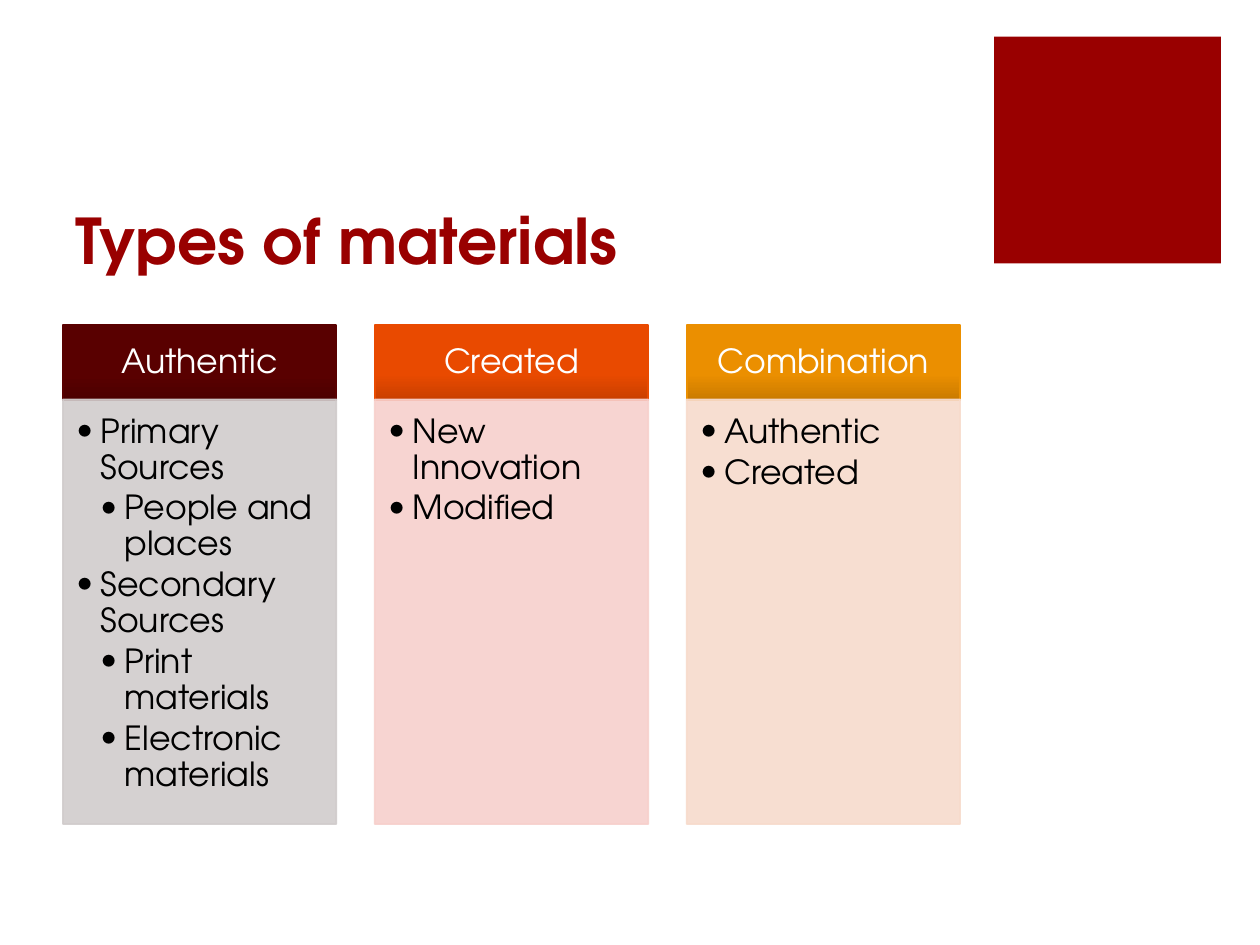
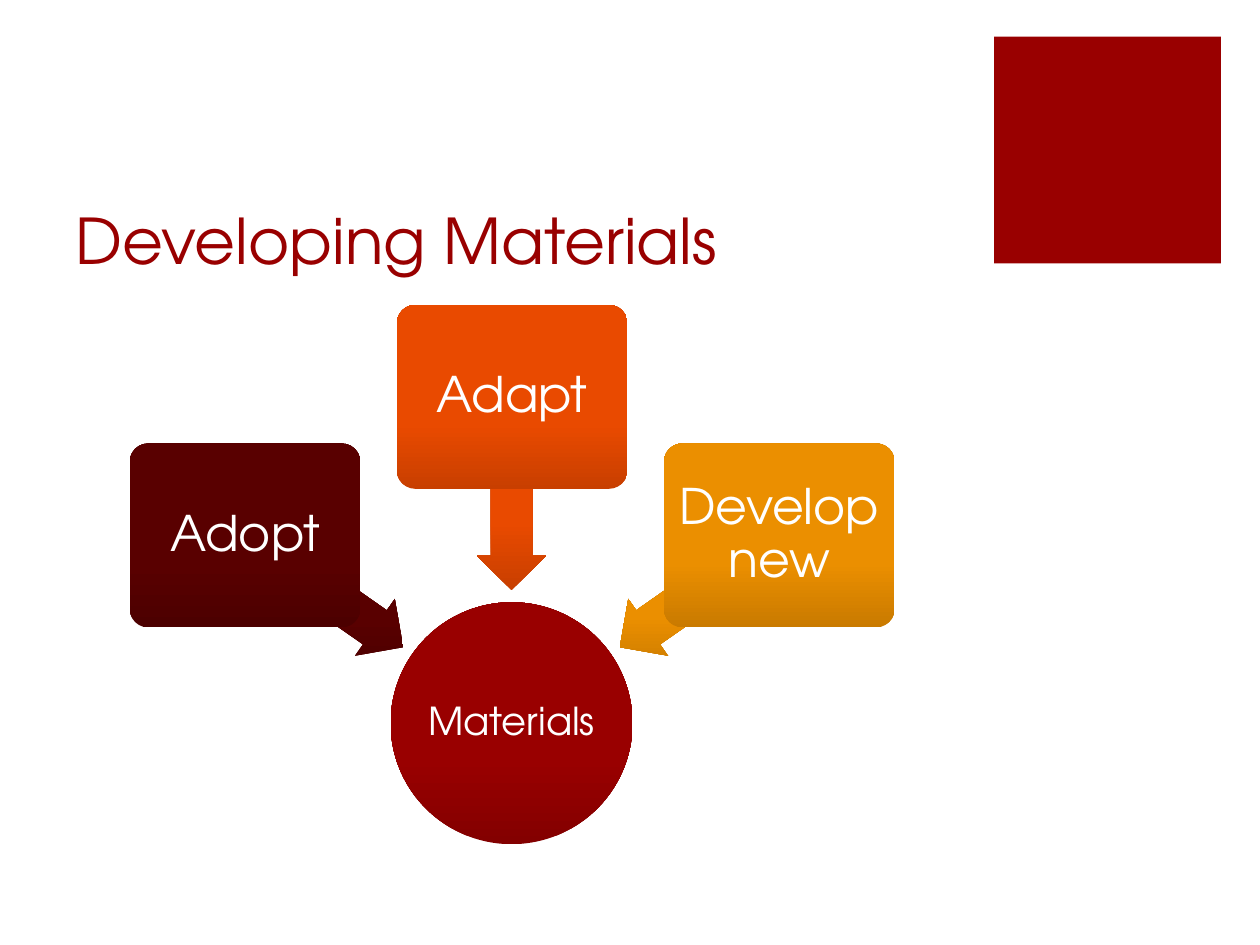
from lxml import etree
from pptx import Presentation, util as u
from pptx.dml.color import RGBColor
from pptx.enum import shapes, text
from pptx.oxml import ns

FONT = "TeX Gyre Adventor"
RED, WHITE, BLACK = "990000", "FFFFFF", "000000"
MAROON, ORANGE, AMBER = ("4C0000", "590000"), ("C83F00", "E94A00"), ("C97A00", "EB8F00")
CRIMSON = ("830000", RED)
KINDS = shapes.MSO_SHAPE


def rgb(value):
    return RGBColor.from_string(value)


def set_opacity(properties, percent):
    for color in properties.iter(ns.qn("a:srgbClr")):
        etree.SubElement(color, ns.qn("a:alpha")).set("val", str(percent * 1000))


def add_bullet(paragraph, level, indent=0.19):
    properties = paragraph._p.get_or_add_pPr()
    properties.set("marL", str(u.Inches(indent * level)))
    properties.set("indent", str(-u.Inches(indent)))
    etree.SubElement(properties, ns.qn("a:buFont")).set("typeface", FONT)
    etree.SubElement(properties, ns.qn("a:buChar")).set("char", "•")


def write(shape, content, size, color=WHITE, bold=False, align=text.PP_ALIGN.CENTER,
          anchor=text.MSO_ANCHOR.MIDDLE, insets=(0.1, 0.05, 0.1, 0.05), spacing=0.9,
          after=0, bullets=False):
    """Fill a shape with a string, or with (level, string) pairs when bulleted."""
    frame = shape.text_frame
    frame.word_wrap = True
    frame.vertical_anchor = anchor
    (frame.margin_left, frame.margin_top,
     frame.margin_right, frame.margin_bottom) = map(u.Inches, insets)
    items = content if bullets else [(1, content)]
    for index, (level, words) in enumerate(items):
        paragraph = frame.add_paragraph() if index else frame.paragraphs[0]
        paragraph.alignment = align
        paragraph.line_spacing = spacing
        paragraph.space_after = u.Pt(after)
        if bullets:
            paragraph.level = level - 1
            add_bullet(paragraph, level)
        run = paragraph.add_run()
        run.text = words
        run.font.name, run.font.size, run.font.bold = FONT, u.Pt(size), bold
        run.font.color.rgb = rgb(color)


class Deck:
    """Hold the presentation, its shared style and the current slide."""

    def __init__(self):
        self.presentation = Presentation()
        self.presentation.slide_width = u.Inches(10)
        self.presentation.slide_height = u.Inches(7.5)
        self.slide = None

    def start_slide(self, title, bold=False):
        self.slide = self.presentation.slides.add_slide(self.presentation.slide_layouts[6])
        self.block(KINDS.RECTANGLE, 7.89, 0.29, 1.8, 1.8, RED)
        box = self.slide.shapes.add_textbox(*map(u.Inches, (0.5, 1, 7.12, 1.25)))
        write(box, title, 36, RED, bold, text.PP_ALIGN.LEFT, text.MSO_ANCHOR.BOTTOM, spacing=1)

    def block(self, kind, left, top, width, height, fill, line=None, opacity=None):
        """Add a preset shape; a (dark, main) pair as fill shades its lower part."""
        shape = self.slide.shapes.add_shape(kind, *map(u.Inches, (left, top, width, height)))
        shape.shadow.inherit = False
        if isinstance(fill, tuple):
            shape.fill.gradient()
            shape.fill.gradient_angle = 90
            for stop, color, position in zip(shape.fill.gradient_stops, fill, (0, 0.35)):
                stop.color.rgb, stop.position = rgb(color), position
            shape._element.spPr.find(ns.qn("a:gradFill")).set("rotWithShape", "0")
        else:
            shape.fill.solid()
            shape.fill.fore_color.rgb = rgb(fill)
        if line:
            shape.line.color.rgb = rgb(line)
            shape.line.width = u.Pt(1)
        else:
            shape.line.fill.background()
        if opacity:
            set_opacity(shape._element.spPr, opacity)
        return shape

    def column(self, left, width, heading, shades, tint, items):
        header = self.block(KINDS.RECTANGLE, left, 2.58, width, 0.6, shades, shades[1])
        write(header, heading, 19, insets=(0.15, 0.08, 0.15, 0.08))
        body = self.block(KINDS.RECTANGLE, left, 3.17, width, 3.37, tint, tint, 90)
        write(body, items, 19, BLACK, align=text.PP_ALIGN.LEFT, anchor=text.MSO_ANCHOR.TOP,
              insets=(0.11, 0.12, 0.15, 0.17), after=2.8, bullets=True)

    def arrow(self, left, top, rotation, shades):
        arrow = self.block(KINDS.LEFT_ARROW, left, top, 1.54, 0.55, shades)
        arrow.adjustments[0], arrow.adjustments[1] = 0.6, 0.5
        arrow.rotation = rotation

    def card(self, left, top, label, shades):
        card = self.block(KINDS.ROUNDED_RECTANGLE, left, top, 1.83, 1.46, shades)
        card.adjustments[0] = 0.1
        write(card, label, 28, insets=(0.06,) * 4)

    def hub(self, label):
        circle = self.block(KINDS.OVAL, 3.1, 4.78, 1.92, 1.92, CRIMSON)
        write(circle, label, 22, insets=(0,) * 4)


def build_types(deck):
    deck.start_slide("Types of materials", bold=True)
    columns = [
        ("Authentic", MAROON, "D1CCCC",
         [(1, "Primary Sources"), (2, "People and places"), (1, "Secondary Sources"),
          (2, "Print materials"), (2, "Electronic materials")]),
        ("Created", ORANGE, "F7D0CC", [(1, "New Innovation"), (1, "Modified")]),
        ("Combination", AMBER, "F7DBCC", [(1, "Authentic"), (1, "Created")]),
    ]
    left, right, width = 0.5, 7.62, 2.17
    step = (right - left - width) / (len(columns) - 1)
    for index, column in enumerate(columns):
        deck.column(left + index * step, width, *column)


def build_developing(deck):
    deck.start_slide("Developing Materials")
    deck.hub("Materials")
    sources = [("Adopt", MAROON, 3.52, 4.42, 215), ("Adapt", ORANGE, 2.42, 3.64, 270),
               ("Develop new", AMBER, 3.52, 4.42, 325)]
    for index, (label, shades, card_top, arrow_top, rotation) in enumerate(sources):
        deck.arrow(1.8 + index * 1.49, arrow_top, rotation, shades)
        deck.card(1.03 + index * 2.12, card_top, label, shades)


def main():
    deck = Deck()
    build_types(deck)
    build_developing(deck)
    deck.presentation.save("out.pptx")


if __name__ == "__main__":
    main()
